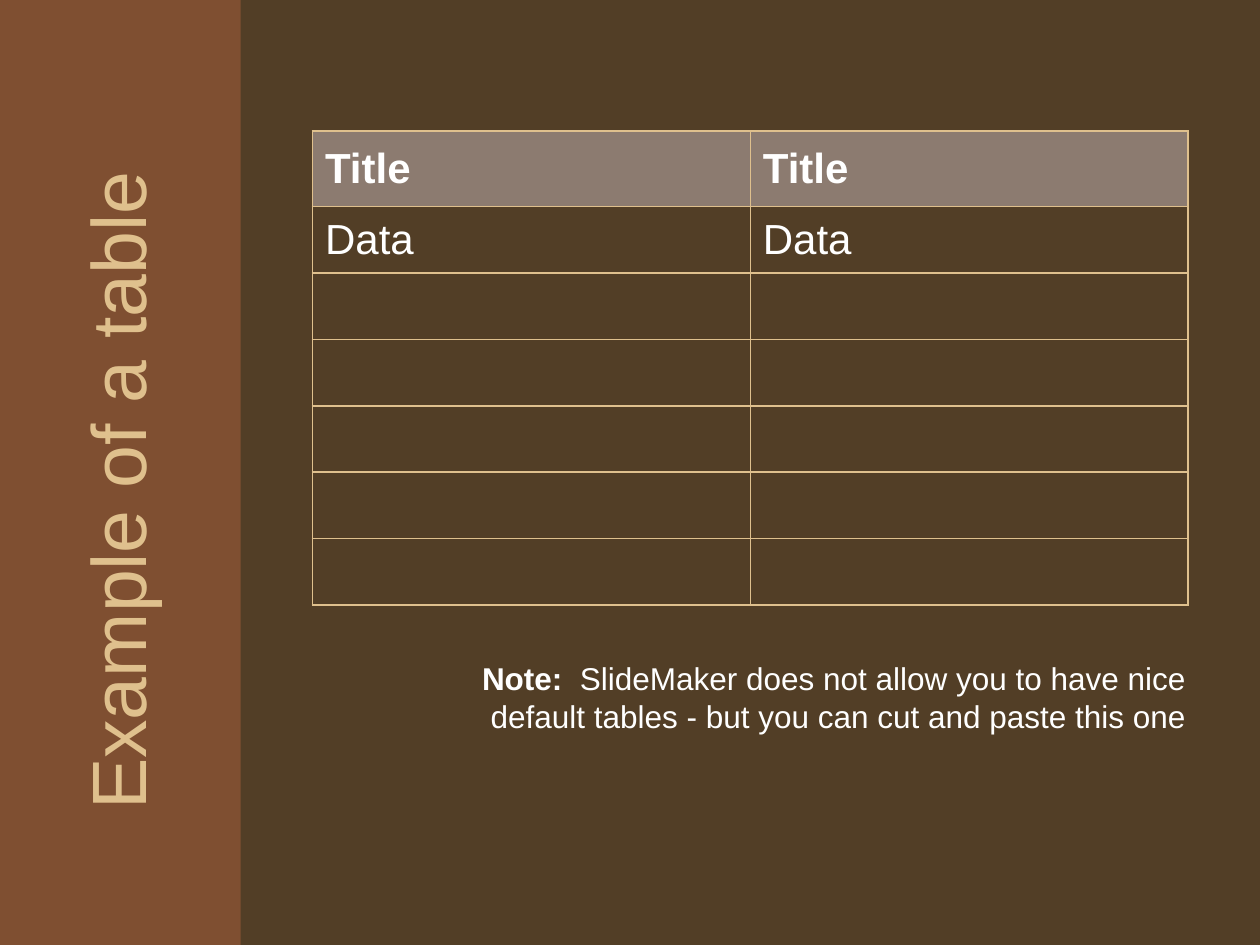
import pptx
import pptx.dml.color
import pptx.enum.shapes
import pptx.enum.text
import pptx.oxml
import pptx.oxml.ns
import pptx.util
from pptx.util import Inches

CREAM = "DFC08D"
WHITE = "FFFFFF"


def color(hex_string):
    return pptx.dml.color.RGBColor.from_string(hex_string)


def add_run(paragraph, text, size, hex_string, bold=False):
    run = paragraph.add_run()
    run.text = text
    run.font.name = "Arial"
    run.font.size = pptx.util.Pt(size)
    run.font.bold = bold
    run.font.color.rgb = color(hex_string)


presentation = pptx.Presentation()
presentation.slide_width = Inches(10)
presentation.slide_height = Inches(7.5)
slide = presentation.slides.add_slide(presentation.slide_layouts[6])
slide.background.fill.solid()
slide.background.fill.fore_color.rgb = color("523E26")

# Side band
band = slide.shapes.add_shape(
    pptx.enum.shapes.MSO_SHAPE.RECTANGLE, 0, 0, Inches(1.91), Inches(7.5))
band.shadow.inherit = False
band.fill.solid()
band.fill.fore_color.rgb = color("7F4F31")
band.line.fill.background()

# Vertical title
title = slide.shapes.add_textbox(Inches(-2.6), Inches(3.27), Inches(7.03), Inches(1.25))
title.rotation = 270
title.text_frame.word_wrap = True
title.text_frame.vertical_anchor = pptx.enum.text.MSO_ANCHOR.MIDDLE
paragraph = title.text_frame.paragraphs[0]
paragraph.alignment = pptx.enum.text.PP_ALIGN.CENTER
add_run(paragraph, "Example of a table", 44, CREAM)

# Table: a header row, one filled row and five empty rows
row_texts = ["Title", "Data"] + [""] * 5
table = slide.shapes.add_table(
    len(row_texts), 2, Inches(2.48), Inches(1.04), Inches(6.95), Inches(3.76)).table
table.horz_banding = False
for column in table.columns:
    column.width = Inches(3.475)
for row_index, text in enumerate(row_texts):
    is_header = row_index == 0
    row = table.rows[row_index]
    row.height = Inches(0.6 if is_header else 0.527)
    for cell in row.cells:
        cell.vertical_anchor = pptx.enum.text.MSO_ANCHOR.MIDDLE
        if text:
            add_run(cell.text_frame.paragraphs[0], text, 24, WHITE, is_header)
        # Borders come before the fill in the cell properties
        properties = cell._tc.get_or_add_tcPr()
        for side in ("lnL", "lnR", "lnT", "lnB"):
            properties.append(pptx.oxml.parse_xml(
                f'<a:{side} {pptx.oxml.ns.nsdecls("a")} w="12700"><a:solidFill>'
                f'<a:srgbClr val="{CREAM}"/></a:solidFill></a:{side}>'))
        if is_header:
            cell.fill.solid()
            cell.fill.fore_color.rgb = color("8C7B70")
        else:
            cell.fill.background()

# Note under the table
note = slide.shapes.add_textbox(Inches(3.05), Inches(5.18), Inches(6.46), Inches(0.71))
note.text_frame.word_wrap = True
paragraph = note.text_frame.paragraphs[0]
paragraph.alignment = pptx.enum.text.PP_ALIGN.RIGHT
add_run(paragraph, "Note:  ", 18, WHITE, bold=True)
add_run(paragraph, "SlideMaker does not allow you to have nice default tables"
        " - but you can cut and paste this one", 18, WHITE)

presentation.save("out.pptx")
